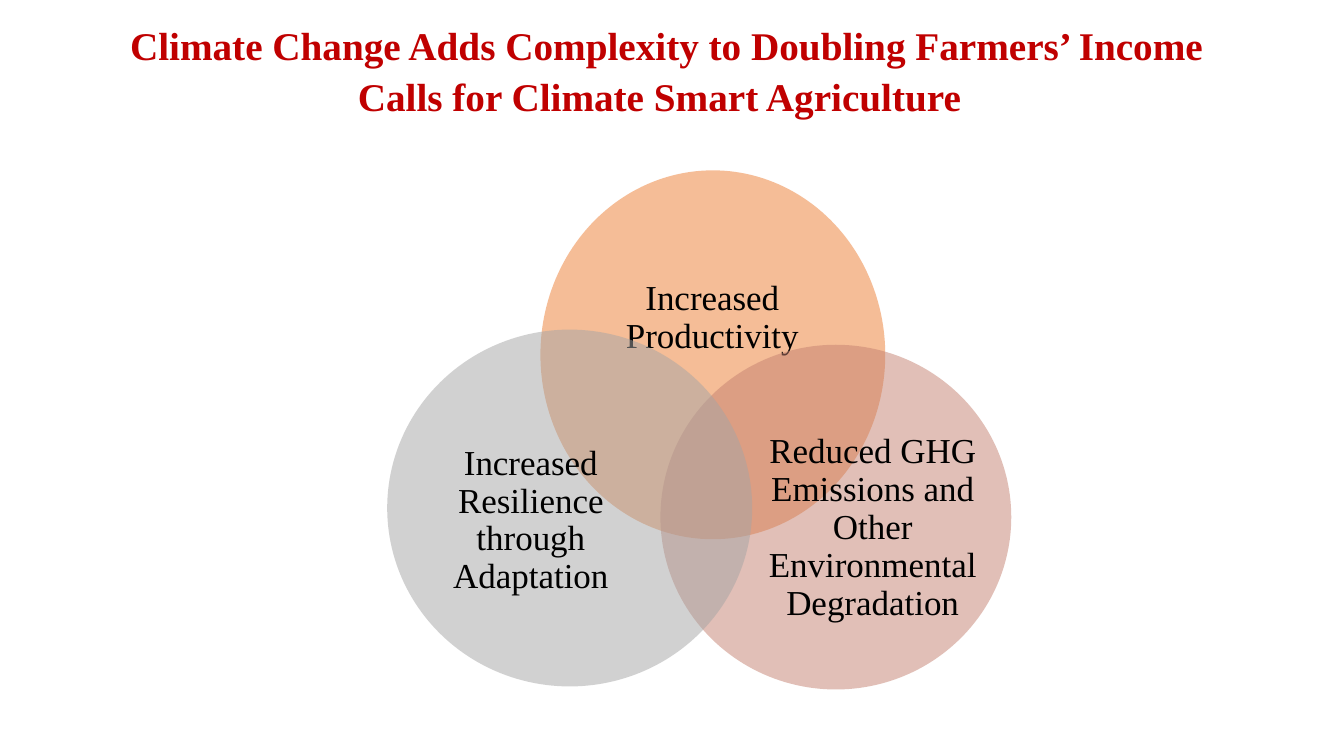
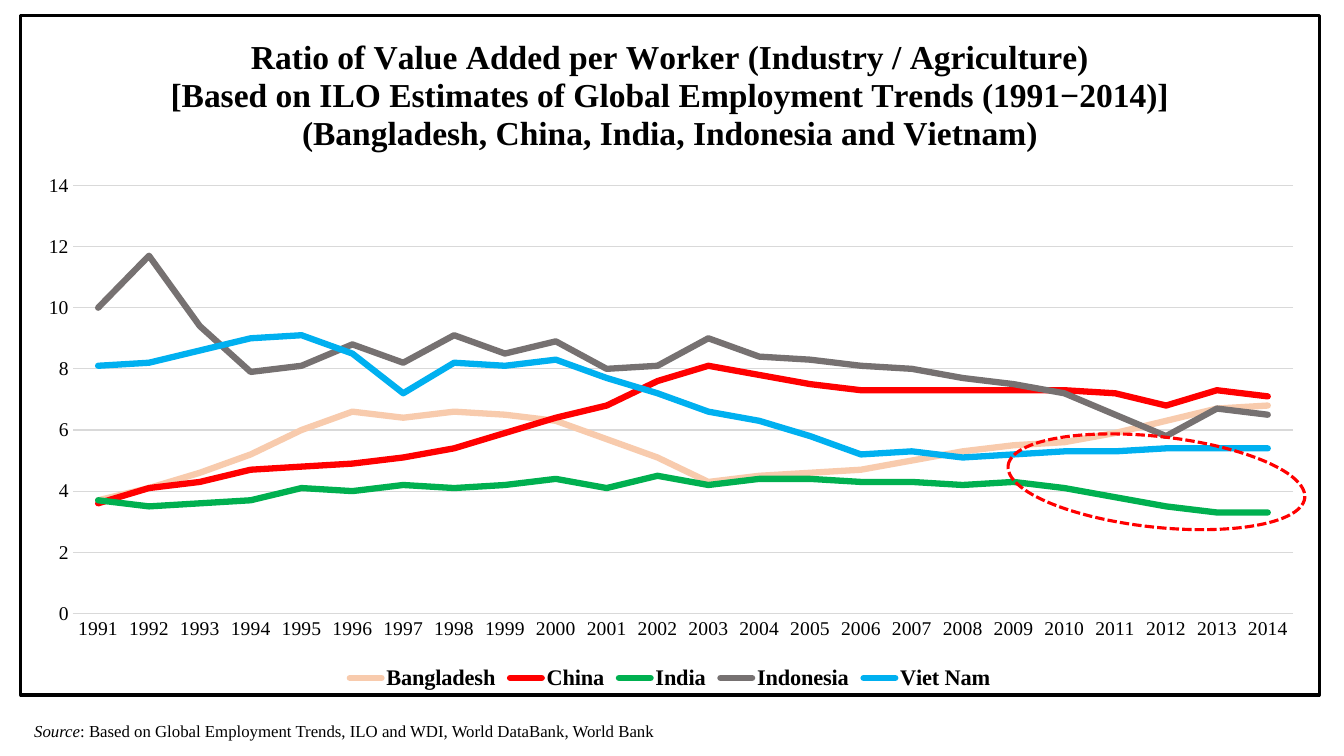
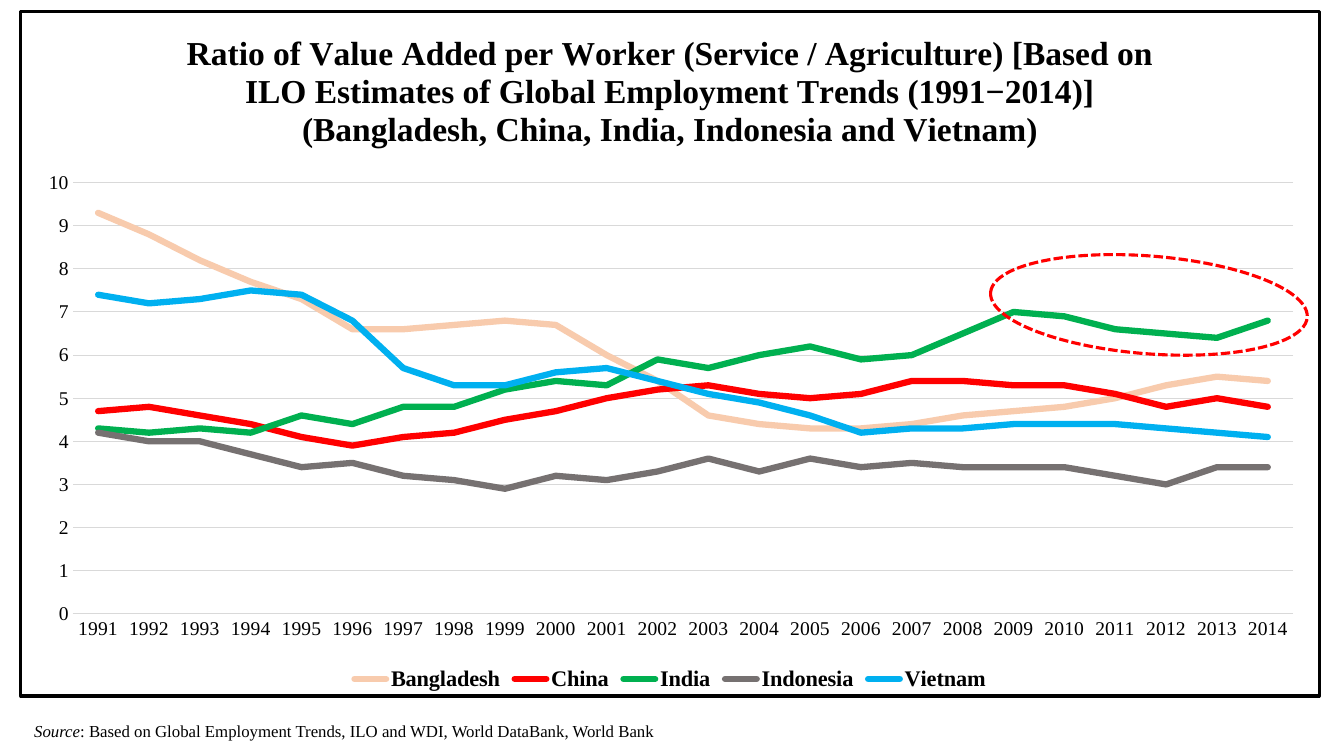
from lxml import etree
from pptx import Presentation
from pptx.chart.data import CategoryChartData
from pptx.dml.color import RGBColor
from pptx.enum import chart as charts, dml, shapes, text
from pptx.oxml import parse_xml
from pptx.oxml.ns import nsdecls, qn
from pptx.util import Inches, Pt

FONT = "Times New Roman"
BLACK = RGBColor(0x00, 0x00, 0x00)
DARK_RED = RGBColor(0xC0, 0x00, 0x00)
RED = RGBColor(0xFF, 0x00, 0x00)
ORANGE = RGBColor(0xED, 0x7D, 0x31)
ROSE = RGBColor(0xC4, 0x81, 0x70)
SILVER = RGBColor(0xA5, 0xA5, 0xA5)
PEACH = RGBColor(0xF8, 0xCB, 0xAD)
GREEN = RGBColor(0x00, 0xB0, 0x50)
GRAY = RGBColor(0x76, 0x71, 0x71)
BLUE = RGBColor(0x00, 0xB0, 0xF0)
GRID = RGBColor(0xD9, 0xD9, 0xD9)

SERIES_COLORS = [PEACH, RED, GREEN, GRAY, BLUE]
YEARS = [str(year) for year in range(1991, 2015)]
PLOT_LAYOUT = {"x": 0.04, "y": 0.25, "w": 0.94, "h": 0.63}

INDUSTRY = {
    "Bangladesh": [3.7, 4.1, 4.6, 5.2, 6, 6.6, 6.4, 6.6, 6.5, 6.3, 5.7, 5.1,
                   4.3, 4.5, 4.6, 4.7, 5, 5.3, 5.5, 5.6, 5.9, 6.3, 6.7, 6.8],
    "China": [3.6, 4.1, 4.3, 4.7, 4.8, 4.9, 5.1, 5.4, 5.9, 6.4, 6.8, 7.6,
              8.1, 7.8, 7.5, 7.3, 7.3, 7.3, 7.3, 7.3, 7.2, 6.8, 7.3, 7.1],
    "India": [3.7, 3.5, 3.6, 3.7, 4.1, 4, 4.2, 4.1, 4.2, 4.4, 4.1, 4.5,
              4.2, 4.4, 4.4, 4.3, 4.3, 4.2, 4.3, 4.1, 3.8, 3.5, 3.3, 3.3],
    "Indonesia": [10, 11.7, 9.4, 7.9, 8.1, 8.8, 8.2, 9.1, 8.5, 8.9, 8, 8.1,
                  9, 8.4, 8.3, 8.1, 8, 7.7, 7.5, 7.2, 6.5, 5.8, 6.7, 6.5],
    "Viet Nam": [8.1, 8.2, 8.6, 9, 9.1, 8.5, 7.2, 8.2, 8.1, 8.3, 7.7, 7.2,
                 6.6, 6.3, 5.8, 5.2, 5.3, 5.1, 5.2, 5.3, 5.3, 5.4, 5.4, 5.4],
}
SERVICE = {
    "Bangladesh": [9.3, 8.8, 8.2, 7.7, 7.3, 6.6, 6.6, 6.7, 6.8, 6.7, 6, 5.4,
                   4.6, 4.4, 4.3, 4.3, 4.4, 4.6, 4.7, 4.8, 5, 5.3, 5.5, 5.4],
    "China": [4.7, 4.8, 4.6, 4.4, 4.1, 3.9, 4.1, 4.2, 4.5, 4.7, 5, 5.2,
              5.3, 5.1, 5, 5.1, 5.4, 5.4, 5.3, 5.3, 5.1, 4.8, 5, 4.8],
    "India": [4.3, 4.2, 4.3, 4.2, 4.6, 4.4, 4.8, 4.8, 5.2, 5.4, 5.3, 5.9,
              5.7, 6, 6.2, 5.9, 6, 6.5, 7, 6.9, 6.6, 6.5, 6.4, 6.8],
    "Indonesia": [4.2, 4, 4, 3.7, 3.4, 3.5, 3.2, 3.1, 2.9, 3.2, 3.1, 3.3,
                  3.6, 3.3, 3.6, 3.4, 3.5, 3.4, 3.4, 3.4, 3.2, 3, 3.4, 3.4],
    "Vietnam": [7.4, 7.2, 7.3, 7.5, 7.4, 6.8, 5.7, 5.3, 5.3, 5.6, 5.7, 5.4,
                5.1, 4.9, 4.6, 4.2, 4.3, 4.3, 4.4, 4.4, 4.4, 4.3, 4.2, 4.1],
}


def style_font(font, size, color=BLACK, bold=False, italic=False):
    font.name, font.size = FONT, Pt(size)
    font.color.rgb = color
    font.bold, font.italic = bold, italic


def frame_chart(chart):
    """Give the chart a square black border and a fixed plot area."""
    space = chart._chartSpace
    space.insert(1, parse_xml(f'<c:roundedCorners {nsdecls("c")} val="0"/>'))
    space.find(qn("c:chart")).addnext(parse_xml(
        f'<c:spPr {nsdecls("c", "a")}><a:solidFill><a:srgbClr val="FFFFFF"/></a:solidFill>'
        f'<a:ln w="{Pt(2.25)}"><a:solidFill><a:srgbClr val="{BLACK}"/></a:solidFill></a:ln></c:spPr>'))
    plot_area = space.find(qn("c:chart")).find(qn("c:plotArea"))
    for layout in plot_area.findall(qn("c:layout")):
        plot_area.remove(layout)
    sizes = "".join(f'<c:{side} val="{share}"/>' for side, share in PLOT_LAYOUT.items())
    plot_area.insert(0, parse_xml(
        f'<c:layout {nsdecls("c")}><c:manualLayout><c:layoutTarget val="inner"/>'
        f'<c:xMode val="edge"/><c:yMode val="edge"/>{sizes}</c:manualLayout></c:layout>'))


class Slides:
    def __init__(self):
        self.deck = Presentation()
        self.deck.slide_width, self.deck.slide_height = Inches(13.33), Inches(7.5)
        self.page = None

    def new_page(self):
        self.page = self.deck.slides.add_slide(self.deck.slide_layouts[6])

    def text_box(self, at, spans, align=text.PP_ALIGN.LEFT):
        """Add one paragraph; each span is a text and its font settings."""
        box = self.page.shapes.add_textbox(*map(Inches, at))
        frame = box.text_frame
        frame.word_wrap = True
        para = frame.paragraphs[0]
        para.alignment = align
        for words, font in spans:
            span = para.add_run()
            span.text = words
            style_font(span.font, **font)
        return frame

    def ellipse(self, at):
        oval = self.page.shapes.add_shape(shapes.MSO_SHAPE.OVAL, *map(Inches, at))
        oval.shadow.inherit = False
        return oval

    def circle(self, at, color, label_at, label):
        oval = self.ellipse(at)
        oval.fill.solid()
        oval.fill.fore_color.rgb = color
        oval.line.fill.background()
        tint = oval._element.spPr.find(qn("a:solidFill"))[0]
        etree.SubElement(tint, qn("a:alpha"), val="50000")
        frame = self.text_box(label_at, [(label, {"size": 25})], text.PP_ALIGN.CENTER)
        frame.margin_left = frame.margin_right = frame.margin_top = frame.margin_bottom = 0
        frame.vertical_anchor = text.MSO_ANCHOR.MIDDLE
        frame.paragraphs[0].line_spacing = 0.9

    def highlight(self, at, rotation):
        ring = self.ellipse(at)
        ring.fill.background()
        ring.line.color.rgb = RED
        ring.line.width = Pt(2.25)
        ring.line.dash_style = dml.MSO_LINE.SQUARE_DOT
        ring.rotation = rotation

    def line_chart(self, at, title, values, top, step):
        data = CategoryChartData()
        data.categories = YEARS
        for name, numbers in values.items():
            data.add_series(name, numbers)
        chart = self.page.shapes.add_chart(
            charts.XL_CHART_TYPE.LINE, *map(Inches, at), data).chart
        style_font(chart.font, 14)

        chart.has_title = True
        chart.chart_title.include_in_layout = False
        chart.chart_title.text_frame.text = title
        for para in chart.chart_title.text_frame.paragraphs:
            style_font(para.runs[0].font, 24, bold=True)

        chart.has_legend = True
        chart.legend.position = charts.XL_LEGEND_POSITION.BOTTOM
        chart.legend.include_in_layout = False
        style_font(chart.legend.font, 16, bold=True)

        for axis in (chart.category_axis, chart.value_axis):
            axis.major_tick_mark = axis.minor_tick_mark = charts.XL_TICK_MARK.NONE
            style_font(axis.tick_labels.font, 14)
        scale = chart.value_axis
        scale.minimum_scale, scale.maximum_scale, scale.major_unit = 0, top, step
        scale.format.line.fill.background()
        for line in (chart.category_axis.format.line, scale.major_gridlines.format.line):
            line.color.rgb = GRID
            line.width = Pt(0.75)

        chart.plots[0].vary_by_categories = False
        for series, color in zip(chart.plots[0].series, SERIES_COLORS):
            series.smooth = False
            series.format.line.color.rgb = color
            series.format.line.width = Pt(4.5)
            stroke = series._element.find(qn("c:spPr")).find(qn("a:ln"))
            stroke.set("cap", "rnd")
            etree.SubElement(stroke, qn("a:round"))
        frame_chart(chart)

    def source_note(self):
        self.text_box((0.24, 7.1, 12.85, 0.3), [
            ("Source", {"size": 12, "italic": True}),
            (": Based on Global Employment Trends, ILO and WDI, World DataBank, World Bank",
             {"size": 12})])


def main():
    slides = Slides()

    slides.new_page()
    slides.circle((5.36, 1.69, 3.42, 3.66), ORANGE,
                  (5.81, 2.33, 2.51, 1.65), "Increased Productivity")
    slides.circle((6.55, 3.42, 3.48, 3.42), ROSE, (7.61, 4.3, 2.09, 1.88),
                  "Reduced GHG Emissions and Other Environmental Degradation")
    slides.circle((3.84, 3.27, 3.62, 3.54), SILVER, (4.18, 4.19, 2.17, 1.95),
                  "Increased Resilience through Adaptation")
    heading = {"color": DARK_RED, "bold": True}
    slides.text_box((0.99, 0, 11.1, 1.25), [
        (" ", {"size": 40, **heading}),
        ("Climate Change Adds Complexity to Doubling Farmers’ Income "
         "Calls for Climate Smart Agriculture", {"size": 28, **heading})],
        text.PP_ALIGN.CENTER)

    countries = "(Bangladesh, China, India, Indonesia and Vietnam)"
    ratio_pages = [
        ((0.19, 0.14, 12.91, 6.77),
         "Ratio of Value Added per Worker (Industry / Agriculture)\n"
         "[Based on ILO Estimates of Global Employment Trends (1991−2014)]\n",
         INDUSTRY, 14, 2, (9.99, 4.33, 2.96, 0.9), 6.2),
        ((0.19, 0.1, 12.91, 6.82),
         "Ratio of Value Added per Worker (Service / Agriculture) [Based on\n"
         "ILO Estimates of Global Employment Trends (1991−2014)]\n",
         SERVICE, 10, 1, (9.82, 2.54, 3.15, 0.97), 4.5),
    ]
    for at, title, values, top, step, ring_at, rotation in ratio_pages:
        slides.new_page()
        slides.line_chart(at, title + countries, values, top, step)
        slides.source_note()
        slides.highlight(ring_at, rotation)

    slides.deck.save("out.pptx")


if __name__ == "__main__":
    main()
